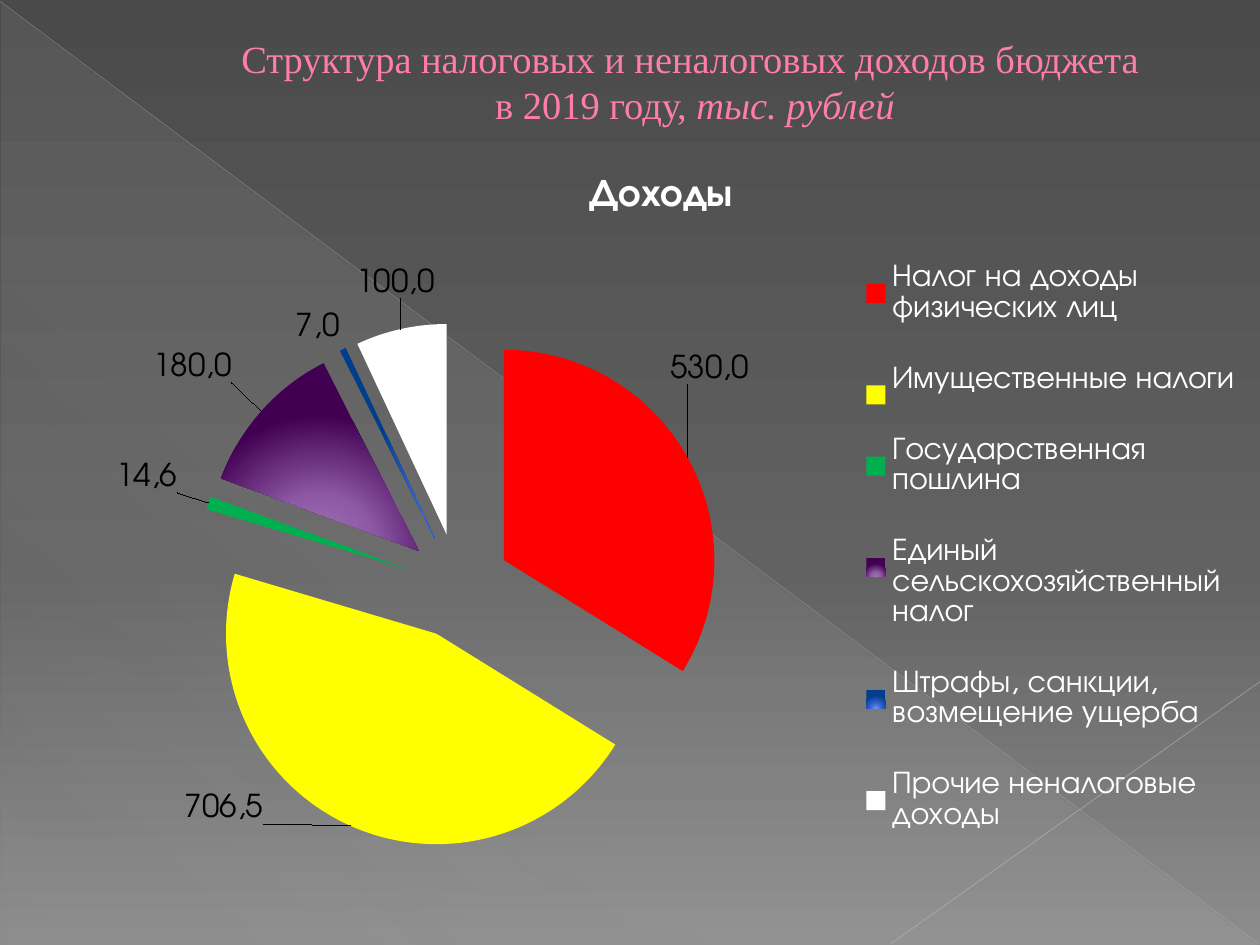
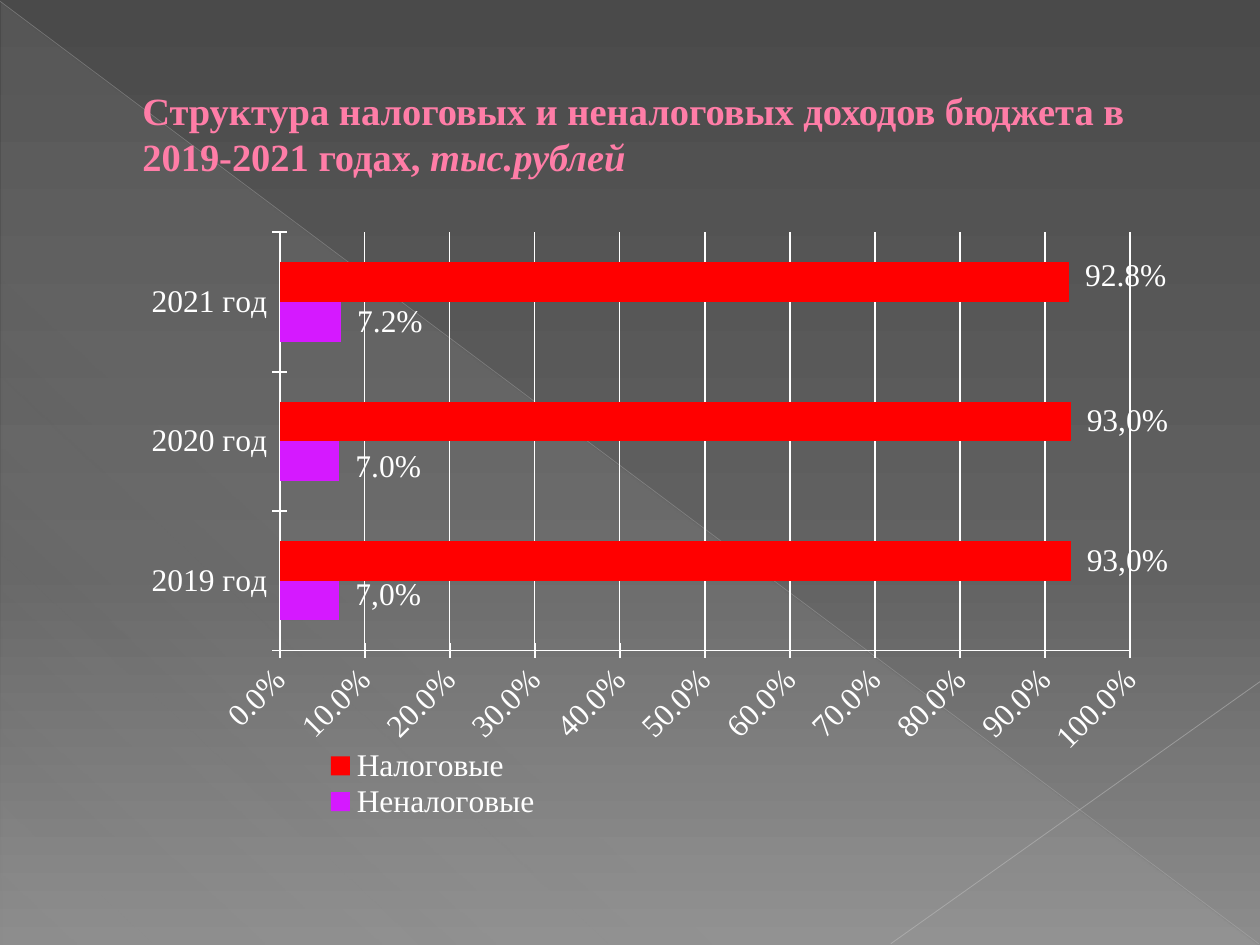
"""Build two slides on the structure of budget revenue: a pie chart and a bar chart."""
from pptx import Presentation
from pptx.chart.data import CategoryChartData
from pptx.dml.color import RGBColor
from pptx.enum.chart import XL_CHART_TYPE, XL_LABEL_POSITION, XL_LEGEND_POSITION, XL_TICK_MARK
from pptx.enum.shapes import MSO_CONNECTOR, MSO_SHAPE
from pptx.enum.text import MSO_ANCHOR, PP_ALIGN
from pptx.oxml import parse_xml
from pptx.oxml.ns import nsdecls, qn
from pptx.util import Inches, Pt

PIE, BAR = XL_CHART_TYPE.PIE_EXPLODED, XL_CHART_TYPE.BAR_CLUSTERED
OUTSIDE = XL_LABEL_POSITION.OUTSIDE_END
RIGHT = XL_LEGEND_POSITION.RIGHT
CROSS = XL_TICK_MARK.CROSS
SERIF, SANS = "Times New Roman", "TeX Gyre Adventor"
PINK, PINK_EDGE, WHITE, BLACK, RED = "FF7DA7", "B12761", "FFFFFF", "000000", "FF0000"
rgb = RGBColor.from_string


def set_gradient(fill, el, stops, direction):
    """Give a fill the stops (position, colour, opacity) and a direction element."""
    fill.gradient()
    old = el.find(".//" + qn("a:gradFill"))
    gs = "".join(f'<a:gs pos="{pos * 1000}"><a:srgbClr val="{c}"><a:alpha val="{op * 1000}"/></a:srgbClr></a:gs>'
                 for pos, c, op in stops)
    old.getparent().replace(old, parse_xml(
        f'<a:gradFill {nsdecls("a")} rotWithShape="1"><a:gsLst>{gs}</a:gsLst>{direction}</a:gradFill>'))


def set_layout(el, index, x, y, w=None, h=None, inner=False):
    """Insert a manual layout, as an offset or as an area of the chart."""
    target = '<c:layoutTarget val="inner"/>' if inner else ""
    mode = '<c:xMode val="edge"/><c:yMode val="edge"/>' if w else ""
    size = f'<c:w val="{w}"/><c:h val="{h}"/>' if w else ""
    for old in el.findall(qn("c:layout")):
        el.remove(old)
    el.insert(index, parse_xml(
        f'<c:layout {nsdecls("c")}><c:manualLayout>{target}{mode}<c:x val="{x}"/><c:y val="{y}"/>{size}'
        '</c:manualLayout></c:layout>'))


prs = Presentation()
prs.slide_width, prs.slide_height = Inches(10), Inches(7.5)
master = prs.slide_master
set_gradient(master.background.fill, master.element,
             [(0, "4A4A4A", 100), (60, "626262", 100), (100, "8C8C8C", 100)], '<a:lin ang="5400000" scaled="0"/>')

titles = [
    ((1, 0.21, 8.5, 0.87), PP_ALIGN.CENTER, False,
     ["Структура налоговых и неналоговых доходов бюджета ", "\n", "в 2019 году, "], "тыс. рублей"),
    ((0.5, 0.29, 9, 1.53), PP_ALIGN.LEFT, True,
     ["Структура налоговых и неналоговых доходов бюджета в 2019-2021 годах, "], "тыс.рублей"),
]
for box, align, bold, parts, unit in titles:
    s = prs.slides.add_slide(prs.slide_layouts[5])
    title = s.shapes.title
    title.left, title.top, title.width, title.height = map(Inches, box)
    tf = title.text_frame
    tf.vertical_anchor = MSO_ANCHOR.MIDDLE
    p = tf.paragraphs[0]
    p.alignment = align
    p.space_before = Pt(0)
    pPr = p._p.get_or_add_pPr()
    pPr.set("marL", str(Inches(0.53)))
    pPr.set("indent", "0")
    for part in parts + [unit]:
        if part == "\n":
            p.add_line_break()
            continue
        r = p.add_run()
        r.text = part
        r.font.name, r.font.size = SERIF, Pt(22)
        r.font.bold, r.font.italic = bold, part == unit
        r.font.color.rgb = rgb(PINK)
        r._r.get_or_add_rPr().insert(0, parse_xml(
            f'<a:ln {nsdecls("a")} w="6350"><a:solidFill><a:srgbClr val="{PINK_EDGE}"/></a:solidFill></a:ln>'))

pie_slide, bar_slide = prs.slides

corner = pie_slide.shapes.add_shape(MSO_SHAPE.RIGHT_TRIANGLE, *map(Inches, (0.01, 0.02, 9.98, 7.48)))
corner.shadow.inherit = False
corner.line.fill.background()
set_gradient(corner.fill, corner._element, [(0, "D2D2D2", 10), (70, "D2D2D2", 8), (100, "D2D2D2", 1)],
             f'<a:lin ang="{133 * 60000}" scaled="0"/>')
decor = [corner]
for ends, color, width, opacity in [((0, 0.01, 9.99, 7.49), "BFBFBF", 0.39, 35),
                                    ((10, 5.41, 7.07, 7.49), "C6C6C6", 0.47, 45)]:
    line = pie_slide.shapes.add_connector(MSO_CONNECTOR.STRAIGHT, *map(Inches, ends))
    line.line.color.rgb, line.line.width = rgb(color), Pt(width)
    spPr = line._element.spPr
    spPr.find(".//" + qn("a:srgbClr")).append(parse_xml(f'<a:alpha {nsdecls("a")} val="{opacity * 1000}"/>'))
    spPr.append(parse_xml(f'<a:effectLst {nsdecls("a")}/>'))
    decor.append(line)
for i, shape in enumerate(decor):
    master.shapes.element.insert(2 + i, shape._element)

taxes = [
    ("Налог на доходы физических лиц", 34, "530,0", RED, (-0.02, -0.09)),
    ("Имущественные налоги", 46, "706,5", "FFFF00", (-0.07, -0.05)),
    ("Государственная пошлина", 1, "14,6", "00B050", (-0.02, -0.01)),
    ("Единый сельскохозяйственный налог", 12, "180,0", ("A078B4", "8E5AA6", "420052"), (-0.02, -0.03)),
    ("Штрафы, санкции, возмещение ущерба", 0.5, "7,0", ("6E96FF", "3C64D2", "003E8C"), (0, 0)),
    ("Прочие неналоговые доходы", 7, "100,0", WHITE, (0.03, -0.03)),
]
data = CategoryChartData()
data.categories = [tax[0] for tax in taxes]
data.add_series("Доходы", [tax[1] for tax in taxes])
chart = pie_slide.shapes.add_chart(PIE, *map(Inches, (0.5, 1.15, 9.5, 6.14)), data).chart
chart.font.name, chart.font.size, chart.font.color.rgb = SANS, Pt(18), rgb(WHITE)
chart.has_title = True
r = chart.chart_title.text_frame.paragraphs[0].add_run()
r.text = "Доходы"
r.font.name, r.font.size, r.font.bold, r.font.color.rgb = SANS, Pt(22), True, rgb(WHITE)
chart.has_legend = True
legend = chart.legend
legend.position, legend.include_in_layout = RIGHT, False
legend.font.name, legend.font.size, legend.font.color.rgb = SANS, Pt(18), rgb(WHITE)
set_layout(legend._element, 1, 0.66, 0.1, 0.33, 0.84)
set_layout(chart.element.find(".//" + qn("c:plotArea")), 0, 0.11, 0.23, 0.44, 0.68, inner=True)
ser = chart.plots[0].series[0]
ser._element.find(qn("c:explosion")).set("val", "25")
for i, (name, share, amount, color, offset) in enumerate(taxes):
    point = ser.points[i]
    fill = point.format.fill
    if isinstance(color, str):
        fill.solid()
        fill.fore_color.rgb = rgb(color)
    else:
        dPt = ser._element.findall(qn("c:dPt"))[i]
        set_gradient(fill, dPt, [(pos, c, 100) for pos, c in zip((0, 40, 100), color)],
                     '<a:path path="circle"><a:fillToRect l="50000" t="100000" r="50000"/></a:path>')
    label = point.data_label
    r = label.text_frame.paragraphs[0].add_run()
    r.text = amount
    r.font.name, r.font.size, r.font.color.rgb = SANS, Pt(18), rgb(BLACK)
    label.position = OUTSIDE
for dLbl, tax in zip(chart.element.iter(qn("c:dLbl")), taxes):
    set_layout(dLbl, 1, *tax[-1])

groups = [
    ("Неналоговые", "D519FF", [0.07, 0.07, 0.072], ["7,0%", None, None], [(0.01, -0.01), (0.01, 0.01), (0.01, 0)]),
    ("Налоговые", RED, [0.93, 0.93, 0.928], ["93,0%", "93,0%", None], [(0.01, 0), (0.01, 0), (0.01, -0.01)]),
]
data = CategoryChartData(number_format="0.0%")
data.categories = ["2019 год", "2020 год", "2021 год"]
for name, color, shares, texts, offsets in groups:
    data.add_series(name, shares)
chart = bar_slide.shapes.add_chart(BAR, *map(Inches, (0.51, 1.7, 9, 4.81)), data).chart
chart.has_title = False
chart.font.name, chart.font.size, chart.font.color.rgb = SANS, Pt(18), rgb(WHITE)
plot = chart.plots[0]
plot.gap_width, plot.overlap, plot.vary_by_categories = 150, 0, False
set_layout(chart.element.find(".//" + qn("c:plotArea")), 0, 0.19, 0.03, 0.75, 0.69, inner=True)
for axis in (chart.category_axis, chart.value_axis):
    axis.major_tick_mark = CROSS
    axis.format.line.color.rgb, axis.format.line.width = rgb(WHITE), Pt(1)
    font = axis.tick_labels.font
    font.name, font.size, font.color.rgb = SERIF, Pt(18), rgb(WHITE)
axis.minimum_scale, axis.maximum_scale, axis.major_unit = 0, 1, 0.1
axis.has_major_gridlines = True
axis.major_gridlines.format.line.color.rgb = rgb(WHITE)
axis.major_gridlines.format.line.width = Pt(0.75)
axis.tick_labels.number_format, axis.tick_labels.number_format_is_linked = "0.0%", False
axis._element.find(qn("c:txPr")).find(qn("a:bodyPr")).set("rot", str(-45 * 60000))
chart.has_legend = True
legend = chart.legend
legend.position, legend.include_in_layout = RIGHT, False
legend.font.name, legend.font.size, legend.font.color.rgb = SERIF, Pt(18), rgb(WHITE)
set_layout(legend._element, 1, 0.2, 0.88, 0.25, 0.12)
for ser, (name, color, shares, texts, offsets) in zip(plot.series, groups):
    ser.invert_if_negative = False
    ser.format.fill.solid()
    ser.format.fill.fore_color.rgb = rgb(color)
    for i, text in enumerate(texts):
        label = ser.points[i].data_label
        if text:
            r = label.text_frame.paragraphs[0].add_run()
            r.text = text
            font = r.font
        else:
            font = label.font
        font.name, font.size, font.color.rgb = SERIF, Pt(18), rgb(WHITE)
        label.position = OUTSIDE
    for dLbl, offset in zip(ser._element.iter(qn("c:dLbl")), offsets):
        set_layout(dLbl, 1, *offset)
    for leader in ser._element.iter(qn("c:showLeaderLines")):
        leader.set("val", "0")

prs.save("out.pptx")
